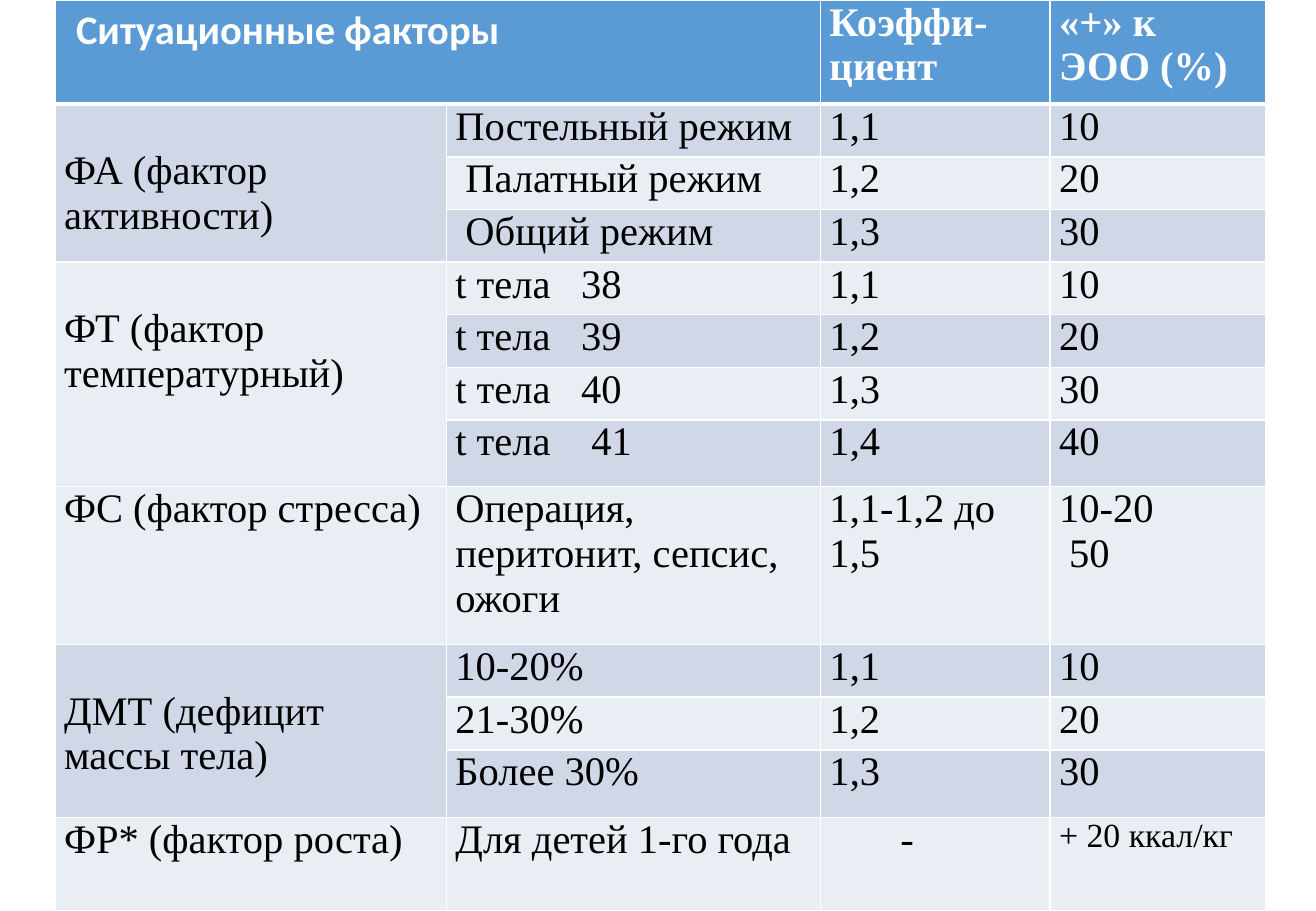
from lxml.etree import SubElement
from pptx import Presentation
from pptx.dml.color import RGBColor
from pptx.oxml.ns import qn
from pptx.util import Cm, Pt

COLORS = {
    "header": "5B9BD5",
    "odd_row": "D0D8E8",
    "even_row": "E9EDF4",
    "border": "FFFFFF",
    "header_text": "FFFFFF",
    "text": "000000",
}
COLUMN_WIDTHS = [8.18, 7.82, 4.8, 4.5]
ROW_HEIGHTS = [2.18] + [1.1] * 6 + [1.4, 3.3, 1.1, 1.1, 1.42, 1.95]

FACTORS = [
    ["Ситуационные факторы", "", "Коэффи-циент", "«+» к ЭОО (%)"],
    ["ФА (фактор активности)", "Постельный режим", "1,1", "10"],
    ["", "Палатный режим", "1,2", "20"],
    ["", "Общий режим", "1,3", "30"],
    ["ФТ (фактор температурный)", "t тела\t38", "1,1", "10"],
    ["", "t тела\t39", "1,2", "20"],
    ["", "t тела\t40", "1,3", "30"],
    ["", "t тела\t41", "1,4", "40"],
    ["ФС (фактор стресса)", "Операция, перитонит, сепсис, ожоги",
     "1,1-1,2 до 1,5", "10-20\n50"],
    ["ДМТ (дефицит массы тела)", "10-20%", "1,1", "10"],
    ["", "21-30%", "1,2", "20"],
    ["", "Более 30%", "1,3", "30"],
    ["ФР* (фактор роста)", "Для детей 1-го года", "-", "+ 20 ккал/кг"],
]
# Merged areas: first cell and last cell
MERGES = [((0, 0), (0, 1)), ((1, 0), (3, 0)), ((4, 0), (7, 0)), ((9, 0), (11, 0))]
# Left indents in cm by row, column and paragraph
INDENTS = {(0, 0, 0): 0.19, (2, 1, 0): 0.21, (3, 1, 0): 0.21,
           (8, 3, 1): 0.21, (12, 2, 0): 1.48}
# Tab stops in cm by row, for the body temperature values
TEMPERATURE_TABS = {4: 2.63, 5: 2.63, 6: 2.63, 7: 2.84}
LINE_GAP = 0.93


def rgb(name):
    return RGBColor.from_string(COLORS[name])


def fill_name(row):
    if row == 0:
        return "header"
    return "odd_row" if row % 2 else "even_row"


def set_borders(cell, row):
    """White lines all round, thicker under the header."""
    widths = {"L": 1, "R": 1, "T": 3 if row == 1 else 1, "B": 3 if row == 0 else 1}
    properties = cell._tc.get_or_add_tcPr()
    for position, (side, width) in enumerate(widths.items()):
        line = SubElement(properties, qn(f"a:ln{side}"), w=str(Pt(width)))
        fill = SubElement(line, qn("a:solidFill"))
        SubElement(fill, qn("a:srgbClr"), val=COLORS["border"])
        properties.insert(position, line)


def set_margins(cell, row, col):
    title = (row, col) == (0, 0)
    cell.margin_left = cell.margin_right = Cm(0.25 if title else 0.19)
    cell.margin_top = cell.margin_bottom = Cm(0.13 if title else 0)
    # Spanning factor names start one line lower
    if col == 0 and row > 0 and cell.is_merge_origin:
        cell.margin_top = Cm(LINE_GAP)


def set_indent(paragraph, length):
    properties = paragraph._p.get_or_add_pPr()
    properties.set("marL", str(Cm(length)))
    properties.set("indent", "0")


def set_tab(paragraph, length):
    tabs = SubElement(paragraph._p.get_or_add_pPr(), qn("a:tabLst"))
    SubElement(tabs, qn("a:tab"), pos=str(Cm(length)), algn="l")


def write_cell(cell, row, col, text):
    cell.text_frame.text = text
    for number, paragraph in enumerate(cell.text_frame.paragraphs):
        if (row, col, number) in INDENTS:
            set_indent(paragraph, INDENTS[row, col, number])
        if col == 1 and row in TEMPERATURE_TABS:
            set_tab(paragraph, TEMPERATURE_TABS[row])
        for run in paragraph.runs:
            font = run.font
            font.name = "Calibri" if (row, col) == (0, 0) else "Times New Roman"
            font.size = Pt(20 if (row, col) == (12, 3) else 24)
            font.bold = row == 0
            font.color.rgb = rgb("header_text" if row == 0 else "text")


def add_factor_table(slide):
    table = slide.shapes.add_table(
        len(ROW_HEIGHTS), len(COLUMN_WIDTHS), Cm(1.15), Cm(0),
        Cm(sum(COLUMN_WIDTHS)), Cm(sum(ROW_HEIGHTS))).table
    table.horz_banding = False

    # Grid
    for column, width in zip(table.columns, COLUMN_WIDTHS):
        column.width = Cm(width)
    for table_row, height in zip(table.rows, ROW_HEIGHTS):
        table_row.height = Cm(height)
    for first, last in MERGES:
        table.cell(*first).merge(table.cell(*last))

    # Cells
    for row, texts in enumerate(FACTORS):
        for col, text in enumerate(texts):
            cell = table.cell(row, col)
            cell.fill.solid()
            cell.fill.fore_color.rgb = rgb(fill_name(row))
            set_borders(cell, row)
            set_margins(cell, row, col)
            if not cell.is_spanned:
                write_cell(cell, row, col, text)


def main():
    presentation = Presentation()
    presentation.slide_width, presentation.slide_height = Cm(27.51), Cm(19.05)
    slide = presentation.slides.add_slide(presentation.slide_layouts[6])
    add_factor_table(slide)
    presentation.save("out.pptx")


if __name__ == "__main__":
    main()
